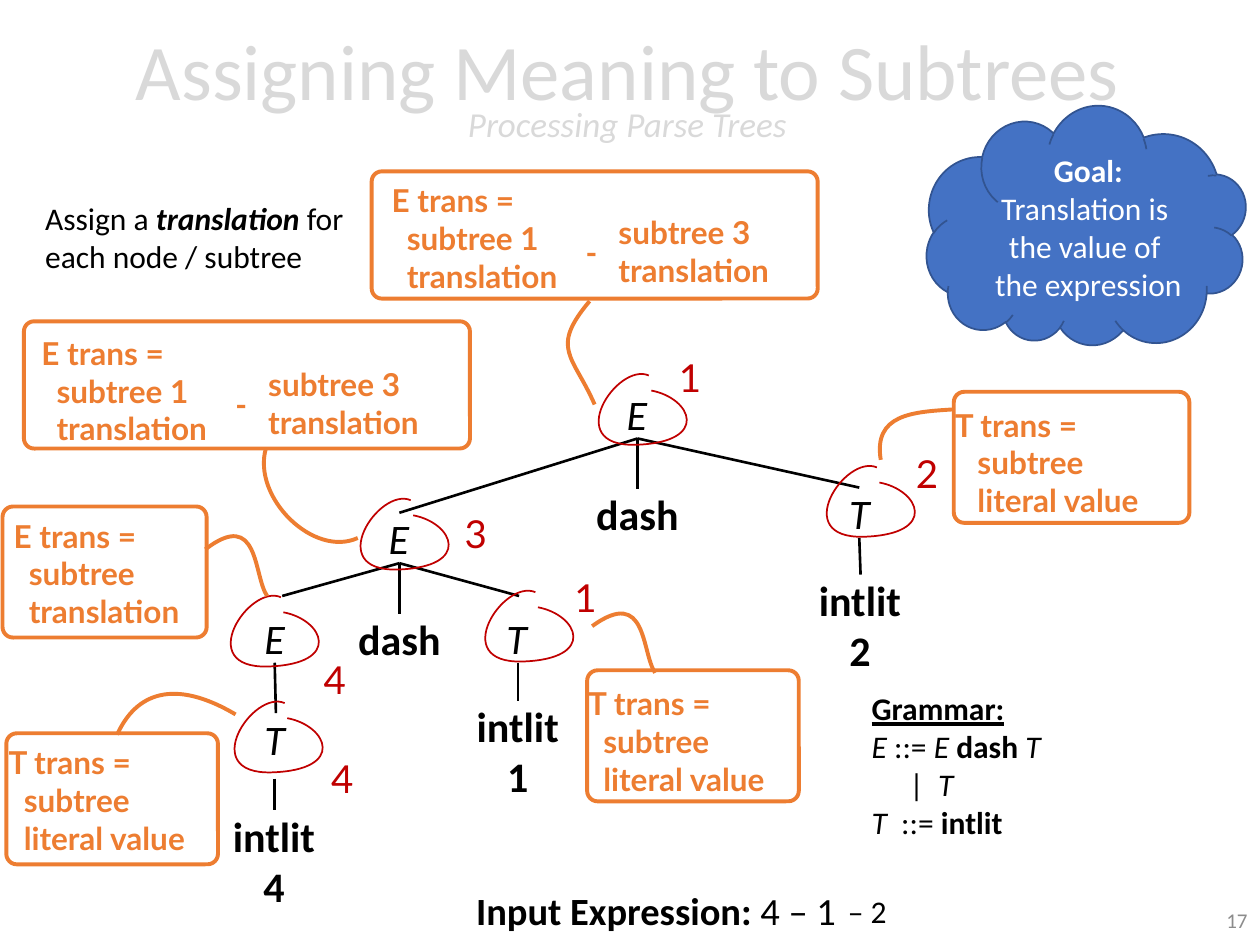
from lxml.etree import SubElement
from pptx import Presentation
from pptx.dml.color import RGBColor
from pptx.enum.shapes import MSO_CONNECTOR, MSO_SHAPE
from pptx.enum.text import MSO_ANCHOR, PP_ALIGN
from pptx.oxml.ns import qn
from pptx.util import Emu, Inches, Pt

# The slide is a grid of 100 columns by 75 rows of square cells.
COLUMNS, ROWS = 100, 75
CELL = Inches(0.1)
BLACK, WHITE, RED, ORANGE = "000000", "FFFFFF", "C00000", "ED7D31"
LEFT, CENTER, RIGHT = PP_ALIGN.LEFT, PP_ALIGN.CENTER, PP_ALIGN.RIGHT
CURVE_STEPS = 24

LOOP = [(4, 0.1), (1.5, -1), (-3, 5.8), (3, 5.6), (8.9, 5.4), (7.4, 1.9), (4.2, 1.3)]

# Each node: text, centre column, top row
SYMBOLS = [("E", 50.55, 30.8), ("E", 31.65, 40.7), ("T", 68.2, 38.7),
           ("E", 21.8, 48.6), ("T", 41.0, 48.6), ("T", 21.8, 56.6)]
TOKENS = [("dash", 50.6, 38.8), ("dash", 31.7, 48.7), ("intlit\n2", 68.25, 45.6),
          ("intlit\n1", 41.1, 55.6), ("intlit\n4", 21.75, 64.3)]
# Each fan of edges: start, ends
EDGES = [((50.6, 34.8), [(31.7, 40.7), (50.6, 38.8), (68.2, 38.7)]),
         ((31.7, 44.7), [(22.4, 47.3), (31.7, 48.7), (41.2, 47.3)]),
         ((68.2, 42.7), [(68.3, 45.6)]),
         ((41.1, 52.6), [(41.1, 55.6)]),
         ((21.8, 52.6), [(21.9, 56.6)]),
         ((21.8, 61.8), [(21.8, 64.3)])]
# Each value: corner of the loop, text, corner of the text
VALUES = [((47.5, 29.7), "1", (52.9, 27.6)), ((28.6, 39.6), "3", (35.9, 40)),
          ((65.6, 37), "2", (71.7, 35.2)), ((18.3, 47.3), "4", (24.7, 51.6)),
          ((38.5, 46.9), "1", (44.6, 45.1)), ((18.6, 55.7), "4", (25.3, 59.4))]

# Each callout: box, corner of the text, head, lines, indent of the lines, pointer curve
SMALL_CALLOUTS = [
    ((0.2, 40.2, 16.2, 10.4), (0.1, 40.5), "E trans =", ["subtree", "translation"], 1.2,
     [(16.3, 43.6), (20.6, 40.3), (20.1, 45.7), (21.2, 47.3)]),
    ((0.5, 58.2, 16.8, 10.4), (-0.3, 58.5), "T trans =", ["subtree", "literal value"], 1.2,
     [(18.7, 56.7), (13.8, 53.8), (10.8, 55), (9.3, 58.3)]),
    ((46.6, 53.2, 16.8, 10.4), (45.7, 53.8), "T trans =", ["subtree", "literal value"], 1.2,
     [(47, 49.7), (51.4, 46.5), (50.9, 51.8), (52, 53.4)]),
    ((75.7, 31.1, 18.7, 10.4), (74.8, 31.7), "T trans =", ["subtree", "literal value"], 1.8,
     [(75.6, 32.5), (72.4, 32.7), (69.3, 32.9), (69.9, 36.5)])]
# Each callout: box, corner of the text, pointer curve
WIDE_CALLOUTS = [
    ((1.9, 25.5, 35.4, 10.1), (2.3, 26),
     [(21.1, 35.6), (20, 39.5), (24.9, 44.3), (28.4, 42.7)]),
    ((29.5, 13.6, 35.4, 10.1), (30.1, 13.9),
     [(46.8, 23.9), (43.6, 27.7), (45.5, 28.2), (47.2, 32.1)])]


def cells(*lengths):
    return [Emu(round(length * CELL)) for length in lengths]


def color(hex_string):
    return RGBColor.from_string(hex_string)


def add_text(slide, box, paragraphs, size, fill=BLACK, font="Calibri", align=LEFT,
             wrap=False, padding=0.5, indents=(), anchor=MSO_ANCHOR.TOP):
    """Each paragraph is a list of (text, style) runs; style letters are b, i and u."""
    frame = slide.shapes.add_textbox(*cells(*box)).text_frame
    frame.word_wrap, frame.vertical_anchor = wrap, anchor
    frame.margin_top = frame.margin_bottom = cells(padding)[0]
    for index, runs in enumerate(paragraphs):
        paragraph = frame.paragraphs[0] if index == 0 else frame.add_paragraph()
        paragraph.alignment = align
        paragraph.font.name, paragraph.font.size = font, Pt(size)
        paragraph.font.color.rgb = color(fill)
        if index < len(indents) and indents[index]:
            properties = paragraph._p.get_or_add_pPr()
            properties.set("marL", str(cells(indents[index])[0]))
            properties.set("indent", "0")
        for text, style in runs:
            run = paragraph.add_run()
            run.text = text
            for letter, name in (("b", "bold"), ("i", "italic"), ("u", "underline")):
                if letter in style:
                    setattr(run.font, name, True)
    return frame


def curve_bounds(points):
    """Return the top left and bottom right corners of joined cubic curves."""
    samples = []
    for first in range(0, len(points) - 1, 3):
        for step in range(CURVE_STEPS + 1):
            t = step / CURVE_STEPS
            weights = ((1 - t) ** 3, 3 * t * (1 - t) ** 2, 3 * t * t * (1 - t), t ** 3)
            samples.append([sum(weight * point[axis] for weight, point
                                in zip(weights, points[first:first + 4])) for axis in (0, 1)])
    return [[bound(axis) for axis in zip(*samples)] for bound in (min, max)]


def add_curve(slide, points, line, width):
    """Draw joined cubic curves; neighbours share an end point."""
    corner, opposite = (cells(*bound) for bound in curve_bounds(points))
    builder = slide.shapes.build_freeform(*corner)
    builder.add_line_segments([opposite], close=False)
    shape = builder.convert_to_shape()
    outline = next(shape._element.iter(qn("a:path")))
    for segment in list(outline):
        outline.remove(segment)
    segments = [("a:moveTo", points[:1])]
    segments += [("a:cubicBezTo", points[first:first + 3]) for first in range(1, len(points), 3)]
    for tag, members in segments:
        segment = SubElement(outline, qn(tag))
        for point in members:
            x, y = cells(*point)
            SubElement(segment, qn("a:pt"), x=str(x - corner[0]), y=str(y - corner[1]))
    style_shape(shape, line, width)


def style_shape(shape, line, width, fill=None):
    shape.shadow.inherit = False
    shape.line.color.rgb, shape.line.width = color(line), Pt(width)
    if fill:
        shape.fill.solid()
        shape.fill.fore_color.rgb = color(fill)
    else:
        shape.fill.background()


def add_edge(slide, start, end):
    connector = slide.shapes.add_connector(MSO_CONNECTOR.STRAIGHT, *cells(*start, *end))
    connector.line.color.rgb, connector.line.width = color(BLACK), Pt(1.5)
    SubElement(connector._element.spPr, qn("a:effectLst"))


def add_title(slide, box):
    frame = add_text(slide, box, [[("Assigning Meaning to Subtrees", "")]], 45, "D9D9D9",
                     align=CENTER, wrap=True, anchor=MSO_ANCHOR.MIDDLE)
    paragraph = frame.paragraphs[0]
    paragraph.line_spacing = 0.7
    paragraph.add_line_break()
    subtitle = paragraph.add_run()
    subtitle.text = "Processing Parse Trees"
    subtitle.font.size, subtitle.font.italic = Pt(20), True


def add_tree(slide):
    for start, ends in EDGES:
        for end in ends:
            add_edge(slide, start, end)
    for nodes, width, style in ((SYMBOLS, 3.7, "i"), (TOKENS, 8.6, "b")):
        for text, center, top in nodes:
            lines = text.split("\n")
            add_text(slide, (center - width / 2, top, width, 4 * len(lines)),
                     [[(line, style)] for line in lines], 24, align=CENTER, padding=0)
    for (left, top), text, corner in VALUES:
        add_curve(slide, [(left + x, top + y) for x, y in LOOP], RED, 1)
        add_text(slide, (*corner, 3.7, 4.4), [[(text, "")]], 22, RED, "Lato")


def add_callout_frame(slide, box, pointer):
    shape = slide.shapes.add_shape(MSO_SHAPE.ROUNDED_RECTANGLE, *cells(*box))
    shape.adjustments[0] = 0.08
    style_shape(shape, ORANGE, 2.25)
    add_curve(slide, pointer, ORANGE, 2.25)


def add_callout_text(slide, box, lines, indents=()):
    add_text(slide, box, [[(line, "b")] for line in lines], 18, ORANGE, "Lato",
             wrap=True, indents=indents)


def add_small_callout(slide, box, corner, head, lines, indent, pointer):
    add_callout_text(slide, (*corner, box[2] + 1, 10.1), [head, *lines], (0, indent, indent))
    add_callout_frame(slide, box, pointer)


def add_wide_callout(slide, box, corner, pointer):
    left, top = corner
    add_callout_text(slide, (left, top, 16.9, 10.1),
                     ["E trans =", "subtree 1", "translation"], (0, 1.2, 1.2))
    add_callout_text(slide, (left + 15.4, top + 4.1, 3.2, 4), ["-"])
    add_callout_text(slide, (left + 16.8, top + 2.5, 16.9, 7.1),
                     ["subtree 3", "translation"], (1.2, 1.2))
    add_callout_frame(slide, box, pointer)


def add_goal_cloud(slide, box):
    left, top, width, height = box
    cloud = slide.shapes.add_shape(MSO_SHAPE.CLOUD, *cells(*box))
    cloud.rotation = 191.5
    style_shape(cloud, "325491", 1, "4472C4")
    add_text(slide, (left + width * 0.17, top + height * 0.16, width * 0.67, height * 0.68),
             [[("Goal:", "b")], [("Translation is ", "")], [("the value of ", "")],
              [("the expression", "")]], 18, WHITE, align=CENTER, wrap=True)


def add_grammar(slide, box):
    add_text(slide, box, [
        [("Grammar:", "bu")],
        [("E ", "i"), ("::=", ""), (" E ", "i"), ("dash", "b"), (" T", "i")],
        [("| ", ""), (" T", "i")],
        [("T ", "i"), (" ::= ", ""), ("intlit", "b")]], 18, wrap=True, indents=(0, 0, 3))


def add_task_and_input(slide):
    add_text(slide, (2.6, 15.3, 26.5, 7.1),
             [[("Assign a ", ""), ("translation", "bi"), (" for", "")],
              [("each node / subtree", "")]], 18)
    add_text(slide, (36.8, 69.9, 41.8, 4.7),
             [[("Input Expression: ", "b"), ("4 – 1", "")]], 22, wrap=True)
    add_text(slide, (66.3, 70.3, 5.1, 4), [[("– 2", "")]], 18)


def main():
    presentation = Presentation()
    presentation.slide_width, presentation.slide_height = cells(COLUMNS, ROWS)
    slide = presentation.slides.add_slide(presentation.slide_layouts[6])
    add_title(slide, (2, 0.3, 95.6, 14.5))
    add_tree(slide)
    add_goal_cloud(slide, (73.6, 8.4, 25.3, 19.4))
    add_grammar(slide, (68.2, 54.2, 17.4, 13.1))
    for callout in SMALL_CALLOUTS:
        add_small_callout(slide, *callout)
    for callout in WIDE_CALLOUTS:
        add_wide_callout(slide, *callout)
    add_task_and_input(slide)
    add_text(slide, (77.5, 71, 22.5, 4), [[("17", "")]], 12, "8C8C8C",
             align=RIGHT, wrap=True, anchor=MSO_ANCHOR.MIDDLE)
    presentation.save("out.pptx")


if __name__ == "__main__":
    main()
